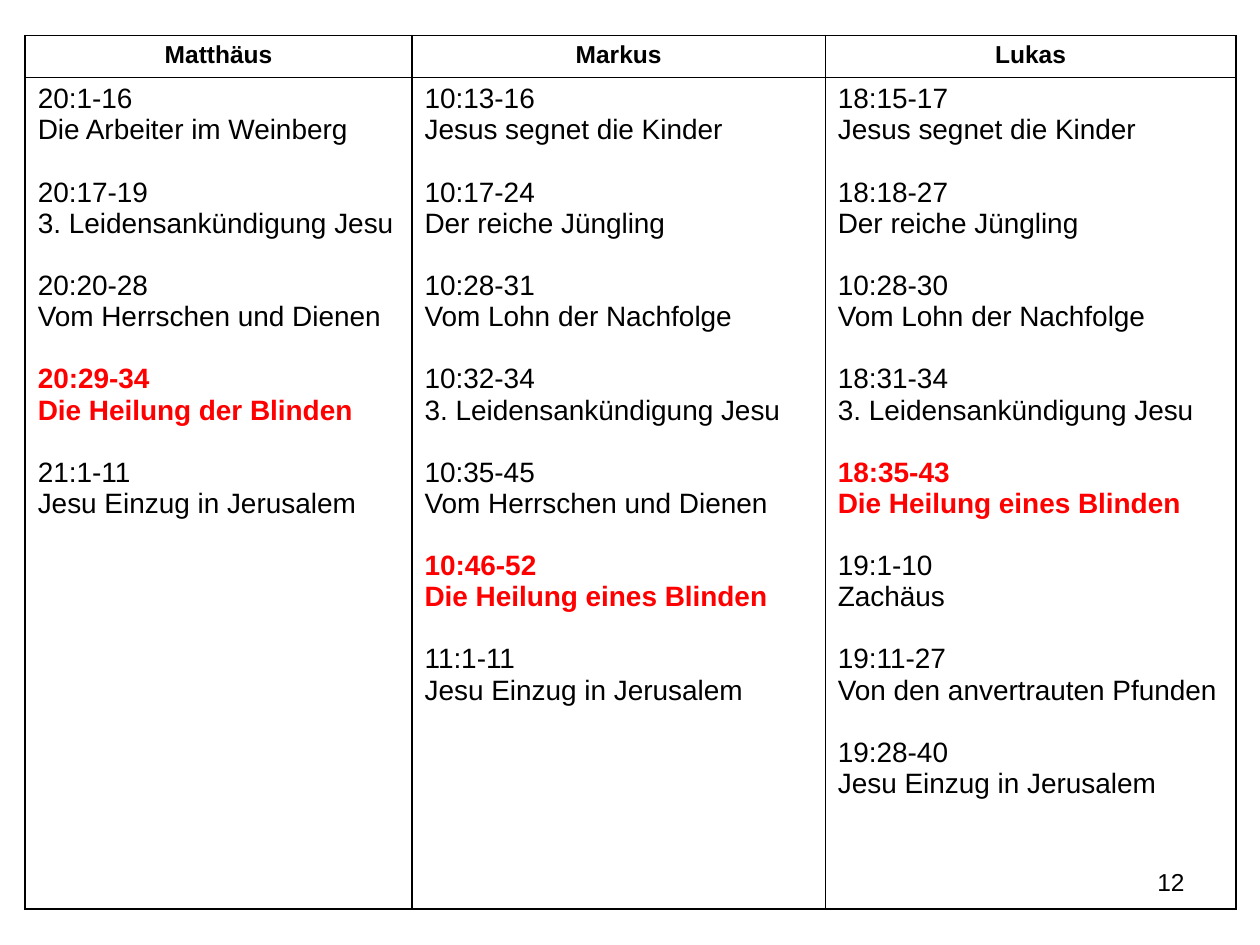
from lxml import etree
from pptx import Presentation
from pptx.dml.color import RGBColor
from pptx.enum.text import PP_ALIGN
from pptx.oxml.ns import qn
from pptx.util import Inches, Pt

COLORS = {"text": "000000", "accent": "FF0000", "line": "000000"}

# Each gospel with its passages: verses and title
GOSPELS = {
    "Matthäus": [
        ("20:1-16", "Die Arbeiter im Weinberg"),
        ("20:17-19", "3. Leidensankündigung Jesu"),
        ("20:20-28", "Vom Herrschen und Dienen"),
        ("20:29-34", "Die Heilung der Blinden"),
        ("21:1-11", "Jesu Einzug in Jerusalem"),
    ],
    "Markus": [
        ("10:13-16", "Jesus segnet die Kinder"),
        ("10:17-24", "Der reiche Jüngling"),
        ("10:28-31", "Vom Lohn der Nachfolge"),
        ("10:32-34", "3. Leidensankündigung Jesu"),
        ("10:35-45", "Vom Herrschen und Dienen"),
        ("10:46-52", "Die Heilung eines Blinden"),
        ("11:1-11", "Jesu Einzug in Jerusalem"),
    ],
    "Lukas": [
        ("18:15-17", "Jesus segnet die Kinder"),
        ("18:18-27", "Der reiche Jüngling"),
        ("10:28-30", "Vom Lohn der Nachfolge"),
        ("18:31-34", "3. Leidensankündigung Jesu"),
        ("18:35-43", "Die Heilung eines Blinden"),
        ("19:1-10", "Zachäus"),
        ("19:11-27", "Von den anvertrauten Pfunden"),
        ("19:28-40", "Jesu Einzug in Jerusalem"),
    ],
}
MARKED = {"20:29-34", "10:46-52", "18:35-43"}


class Deck:
    def __init__(self, slide, font="Arial", gap=17.8):
        self.slide = slide
        self.font = font
        self.gap = Pt(gap)

    def put(self, para, text, size, align, color="text", bold=False):
        para.alignment = align
        run = para.add_run()
        run.text = text
        run.font.name = self.font
        run.font.size = Pt(size)
        run.font.bold = bold
        run.font.color.rgb = RGBColor.from_string(COLORS[color])

    def label(self, text, left, top, width, height):
        box = self.slide.shapes.add_textbox(
            Inches(left), Inches(top), Inches(width), Inches(height))
        box.text_frame.word_wrap = True
        self.put(box.text_frame.paragraphs[0], text, 14, PP_ALIGN.RIGHT)

    def border(self, cell):
        props = cell._tc.get_or_add_tcPr()
        for at, side in enumerate(("lnL", "lnR", "lnT", "lnB")):
            line = etree.Element(qn(f"a:{side}"), w=str(Pt(1)))
            fill = etree.SubElement(line, qn("a:solidFill"))
            etree.SubElement(fill, qn("a:srgbClr"), val=COLORS["line"])
            props.insert(at, line)

    def verses(self, frame, items):
        para = frame.paragraphs[0]
        for i, (verse, title) in enumerate(items):
            if i:
                para = frame.add_paragraph()
                para.space_before = self.gap
            marked = verse in MARKED
            color = "accent" if marked else "text"
            self.put(para, verse, 16, PP_ALIGN.JUSTIFY, color, marked)
            self.put(frame.add_paragraph(), title, 16, PP_ALIGN.JUSTIFY,
                     color, marked)

    def table(self, data, left, top, widths, heights):
        grid = self.slide.shapes.add_table(
            len(heights), len(widths), Inches(left), Inches(top),
            Inches(sum(widths)), Inches(sum(heights))).table
        for row, height in zip(grid.rows, heights):
            row.height = Inches(height)
        for col, width in zip(grid.columns, widths):
            col.width = Inches(width)
        for cell in grid.iter_cells():
            cell.fill.background()
            self.border(cell)
        for c, (name, items) in enumerate(data.items()):
            head = grid.cell(0, c).text_frame.paragraphs[0]
            self.put(head, name, 14, PP_ALIGN.CENTER, bold=True)
            self.verses(grid.cell(1, c).text_frame, items)


def main():
    prs = Presentation()
    prs.slide_width, prs.slide_height = Inches(10), Inches(7.5)
    deck = Deck(prs.slides.add_slide(prs.slide_layouts[6]))

    # Page number
    deck.label("12", 7.17, 6.83, 2.33, 0.52)

    # Gospel comparison
    deck.table(GOSPELS, 0.2, 0.28, (3.07, 3.28, 3.26), (0.33, 6.6))

    prs.save("out.pptx")


if __name__ == "__main__":
    main()
